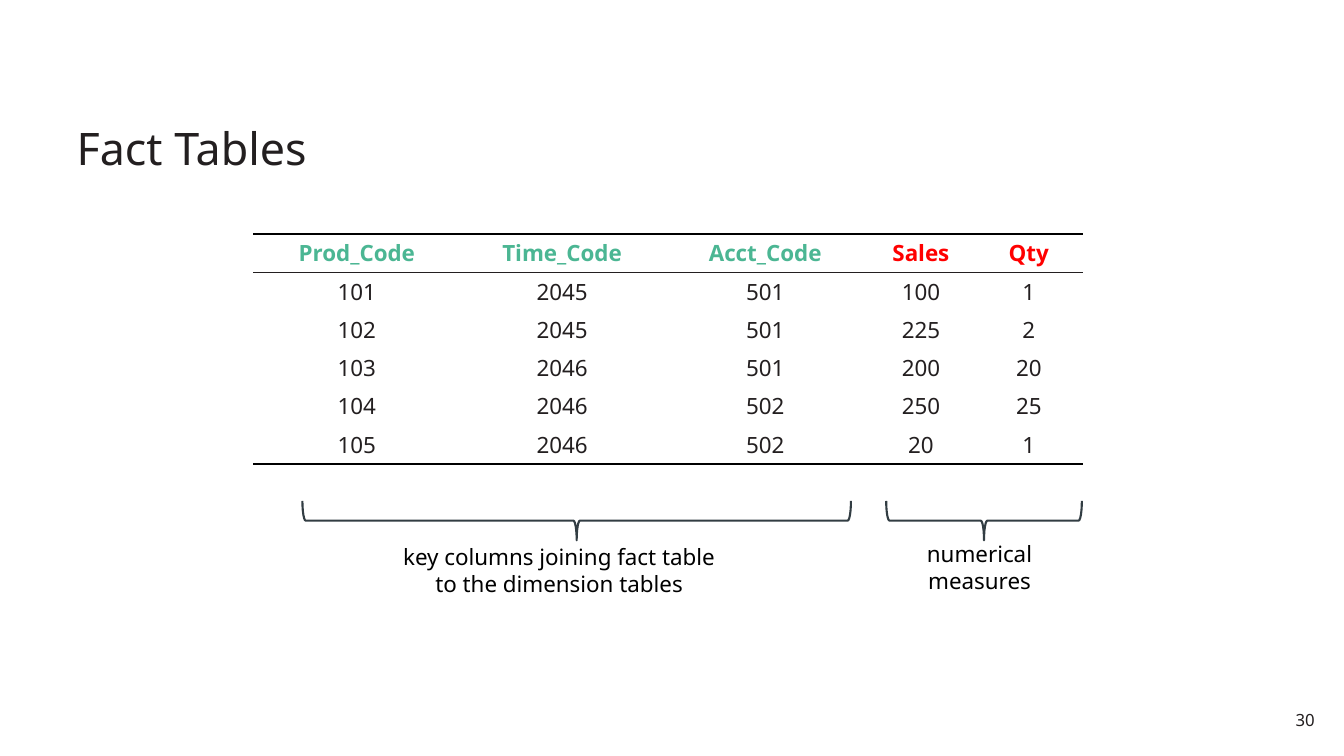
from lxml.etree import SubElement
from pptx import Presentation
from pptx.dml.color import RGBColor
from pptx.enum.shapes import MSO_SHAPE
from pptx.enum.text import MSO_ANCHOR, PP_ALIGN
from pptx.oxml.ns import qn
from pptx.util import Pt

EMU_PER_PX = 9144
FONT = "Noto Sans"
INK, BLACK, GREEN, RED, SLATE = "231F20", "000000", "4BB693", "FF0000", "323D43"

COLUMN_WIDTHS = [206, 201, 202, 107, 107]
ROW_HEIGHT = 38
KEY_COLUMNS = 3
FACTS = [
    ["Prod_Code", "Time_Code", "Acct_Code", "Sales", "Qty"],
    ["101", "2045", "501", "100", "1"],
    ["102", "2045", "501", "225", "2"],
    ["103", "2046", "501", "200", "20"],
    ["104", "2046", "502", "250", "25"],
    ["105", "2046", "502", "20", "1"],
]


def px(length):
    return round(length * EMU_PER_PX)


def color(hex_code):
    return RGBColor.from_string(hex_code)


def style_para(para, size, hex_code, align, bold=False):
    para.alignment = align
    for span in para.runs:
        span.font.name = FONT
        span.font.size = Pt(size)
        span.font.bold = bold
        span.font.color.rgb = color(hex_code)


def add_text(page, box, text, size, hex_code, align=PP_ALIGN.LEFT,
             margins=(0, 0), anchor=MSO_ANCHOR.TOP, line_spacing=None):
    """Margins are (horizontal, vertical)."""
    frame = page.shapes.add_textbox(*map(px, box)).text_frame
    frame.word_wrap = True
    frame.vertical_anchor = anchor
    frame.margin_left = frame.margin_right = px(margins[0])
    frame.margin_top = frame.margin_bottom = px(margins[1])
    frame.text = text
    for para in frame.paragraphs:
        style_para(para, size, hex_code, align)
        para.line_spacing = line_spacing


def set_borders(cell, top=None, bottom=None):
    """Each border is a (colour, points) pair; a missing one is left undrawn."""
    properties = cell._tc.get_or_add_tcPr()
    sides = {"a:lnL": None, "a:lnR": None, "a:lnT": top, "a:lnB": bottom}
    for tag, border in sides.items():
        line = SubElement(properties, qn(tag))
        if border:
            hex_code, points = border
            line.set("w", str(Pt(points)))
            fill = SubElement(line, qn("a:solidFill"))
            SubElement(fill, qn("a:srgbClr")).set("val", hex_code)
        else:
            SubElement(line, qn("a:noFill"))


def add_fact_table(page, left, top):
    box = (left, top, sum(COLUMN_WIDTHS), ROW_HEIGHT * len(FACTS))
    table = page.shapes.add_table(
        len(FACTS), len(COLUMN_WIDTHS), *map(px, box)).table
    table.first_row = table.horz_banding = False
    for column, width in zip(table.columns, COLUMN_WIDTHS):
        column.width = px(width)

    outer, header_rule = (BLACK, 1.5), (INK, 1)
    tops = {0: outer, 1: header_rule}
    bottoms = {0: header_rule, len(FACTS) - 1: outer}
    for row_index, values in enumerate(FACTS):
        table.rows[row_index].height = px(ROW_HEIGHT)
        is_header = row_index == 0
        for column_index, value in enumerate(values):
            cell = table.cell(row_index, column_index)
            cell.margin_left = cell.margin_right = px(9)
            cell.margin_top = cell.margin_bottom = px(4)
            set_borders(cell, tops.get(row_index), bottoms.get(row_index))
            cell.fill.background()
            header_color = GREEN if column_index < KEY_COLUMNS else RED
            cell.text_frame.text = value
            style_para(cell.text_frame.paragraphs[0], 16,
                       header_color if is_header else INK,
                       PP_ALIGN.CENTER, is_header)


def add_brace_below(page, left, top, width, height):
    """Turn a left brace so that it fills the box and points down."""
    turned_left = left + (width - height) / 2
    turned_top = top + (height - width) / 2
    brace = page.shapes.add_shape(
        MSO_SHAPE.LEFT_BRACE, px(turned_left), px(turned_top), px(height), px(width))
    brace.rotation = 270
    brace.shadow.inherit = False
    brace.fill.background()
    brace.line.color.rgb = color(SLATE)
    brace.line.width = Pt(1.5)


def add_column_note(page, brace_box, text_box, text):
    add_brace_below(page, *brace_box)
    add_text(page, text_box, text, 16, BLACK, PP_ALIGN.CENTER)


def build_fact_page(page):
    add_text(page, (68, 76, 1197, 102), "Fact Tables", 32, INK,
             margins=(8, 4), anchor=MSO_ANCHOR.BOTTOM, line_spacing=0.9)
    add_fact_table(page, 251, 232)
    add_column_note(page, (300, 497, 544, 39), (372, 539, 365, 74),
                    "key columns joining fact table\nto the dimension tables")
    add_column_note(page, (879, 497, 194, 39), (904, 536, 135, 55),
                    "numerical\nmeasures")
    add_text(page, (1265, 698, 47, 31), "30", 12, INK, PP_ALIGN.RIGHT, (8, 6))


def main():
    deck = Presentation()
    deck.slide_width, deck.slide_height = px(1333), px(750)
    build_fact_page(deck.slides.add_slide(deck.slide_layouts[6]))
    deck.save("out.pptx")


if __name__ == "__main__":
    main()
